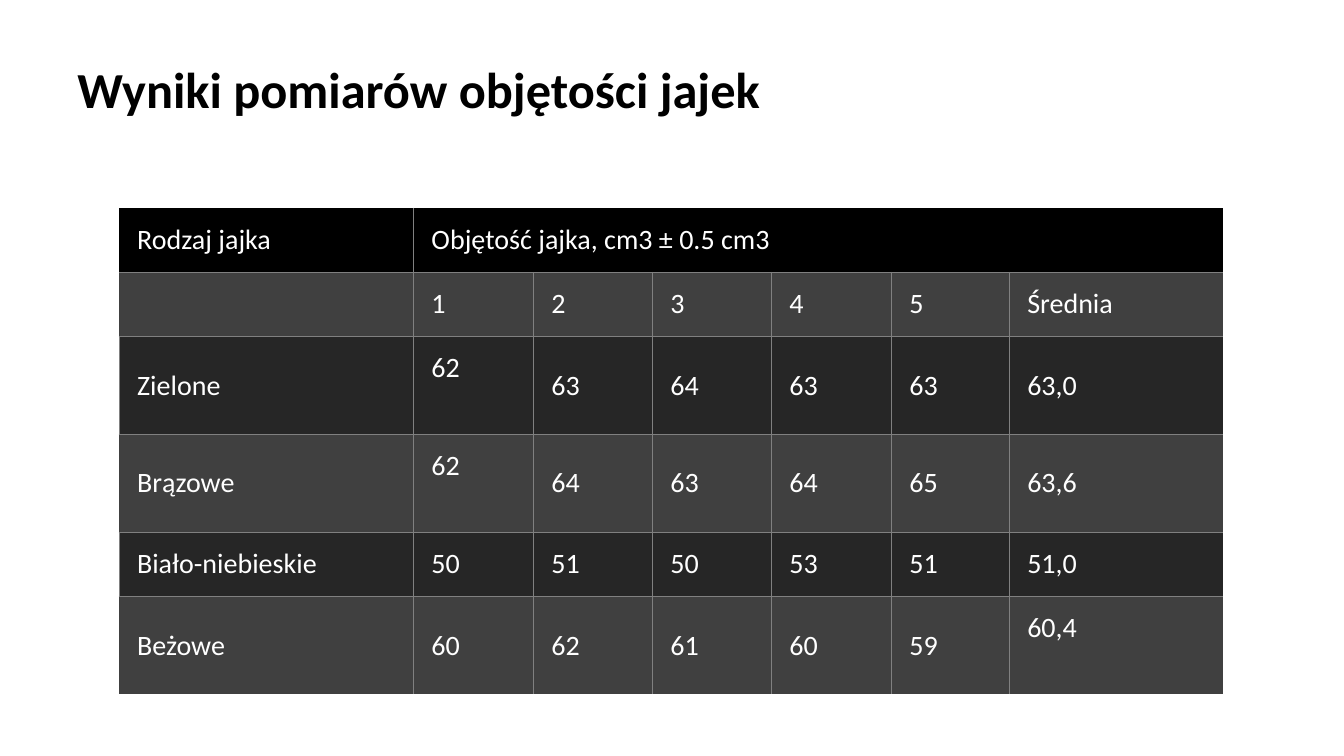
from lxml.etree import SubElement as Sub
from pptx import Presentation
from pptx.dml.color import RGBColor as Color
from pptx.enum.text import MSO_ANCHOR as Anchor
from pptx.oxml.ns import qn
from pptx.util import Inches, Pt

WHITE, BLACK, GREY = "FFFFFF", "000000", "808080"
BANDS = ["404040", "262626"]
COLS = [2.92, 1.19, 1.18, 1.18, 1.19, 1.17, 2.12]
HEIGHTS = [0.64, 0.64, 0.97, 0.97, 0.64, 0.97]
ROWS = [
    ["Rodzaj jajka", "Objętość jajka, cm3 ± 0.5 cm3", "", "", "", "", ""],
    ["", "1", "2", "3", "4", "5", "Średnia"],
    ["Zielone", "62", "63", "64", "63", "63", "63,0"],
    ["Brązowe", "62", "64", "63", "64", "65", "63,6"],
    ["Biało-niebieskie", "50", "51", "50", "53", "51", "51,0"],
    ["Beżowe", "60", "62", "61", "60", "59", "60,4"],
]
RAISED = {(2, 1), (3, 1), (5, 6)}
PAD = {"margin_left": Inches(0.18), "margin_top": Inches(0.14),
       "margin_right": 0, "margin_bottom": Inches(0.14)}


def tint(value):
    return Color.from_string(value)


def apply(target, values):
    for name, value in values.items():
        setattr(target, name, value)


def write(frame, text, size, color, bold=False):
    run = frame.paragraphs[0].add_run()
    run.text = text
    apply(run.font, {"name": "Calibri", "size": Pt(size), "bold": bold})
    run.font.color.rgb = tint(color)


def add_title(slide, text):
    box = slide.shapes.add_textbox(Inches(0.67), Inches(0.6),
                                   Inches(11.97), Inches(1.24))
    apply(box.text_frame, {"word_wrap": True, "vertical_anchor": Anchor.TOP})
    box.text_frame.paragraphs[0].line_spacing = 0.9
    write(box.text_frame, text, 36, BLACK, True)


def edges(row, col):
    """Tell which sides of a cell carry a line."""
    head = row == 0
    return {
        "L": col == 1 or not head and (col > 0 or row in (2, 4)),
        "R": col == 0 or not head and col < len(COLS) - 1,
        "T": not head,
        "B": row < len(ROWS) - 1,
    }


def add_lines(cell, sides):
    props = cell._tc.get_or_add_tcPr()
    for side, shown in sides.items():
        line = Sub(props, qn(f"a:ln{side}"), w=str(Pt(0.5)))
        if shown:
            fill = Sub(line, qn("a:solidFill"))
            Sub(fill, qn("a:srgbClr"), val=GREY)
        else:
            Sub(line, qn("a:noFill"))


def add_cell(cell, row, col, text):
    raised = (row, col) in RAISED
    apply(cell, PAD)
    cell.vertical_anchor = Anchor.TOP if raised else Anchor.MIDDLE
    add_lines(cell, edges(row, col))
    cell.fill.solid()
    cell.fill.fore_color.rgb = tint(BANDS[(row - 1) % 2] if row else BLACK)
    if text:
        write(cell.text_frame, text, 20, WHITE)


def add_grid(slide):
    table = slide.shapes.add_table(
        len(ROWS), len(COLS), Inches(1.18), Inches(2.06),
        Inches(sum(COLS)), Inches(sum(HEIGHTS))).table
    for col, width in zip(table.columns, COLS):
        col.width = Inches(width)
    for row, height in zip(table.rows, HEIGHTS):
        row.height = Inches(height)
    for r, texts in enumerate(ROWS):
        for c, text in enumerate(texts):
            add_cell(table.cell(r, c), r, c, text)
    table.cell(0, 1).merge(table.cell(0, len(COLS) - 1))


def main():
    deck = Presentation()
    apply(deck, {"slide_width": Inches(13.33), "slide_height": Inches(7.5)})
    slide = deck.slides.add_slide(deck.slide_layouts[6])
    add_title(slide, "Wyniki pomiarów objętości jajek")
    add_grid(slide)
    deck.save("out.pptx")


if __name__ == "__main__":
    main()
